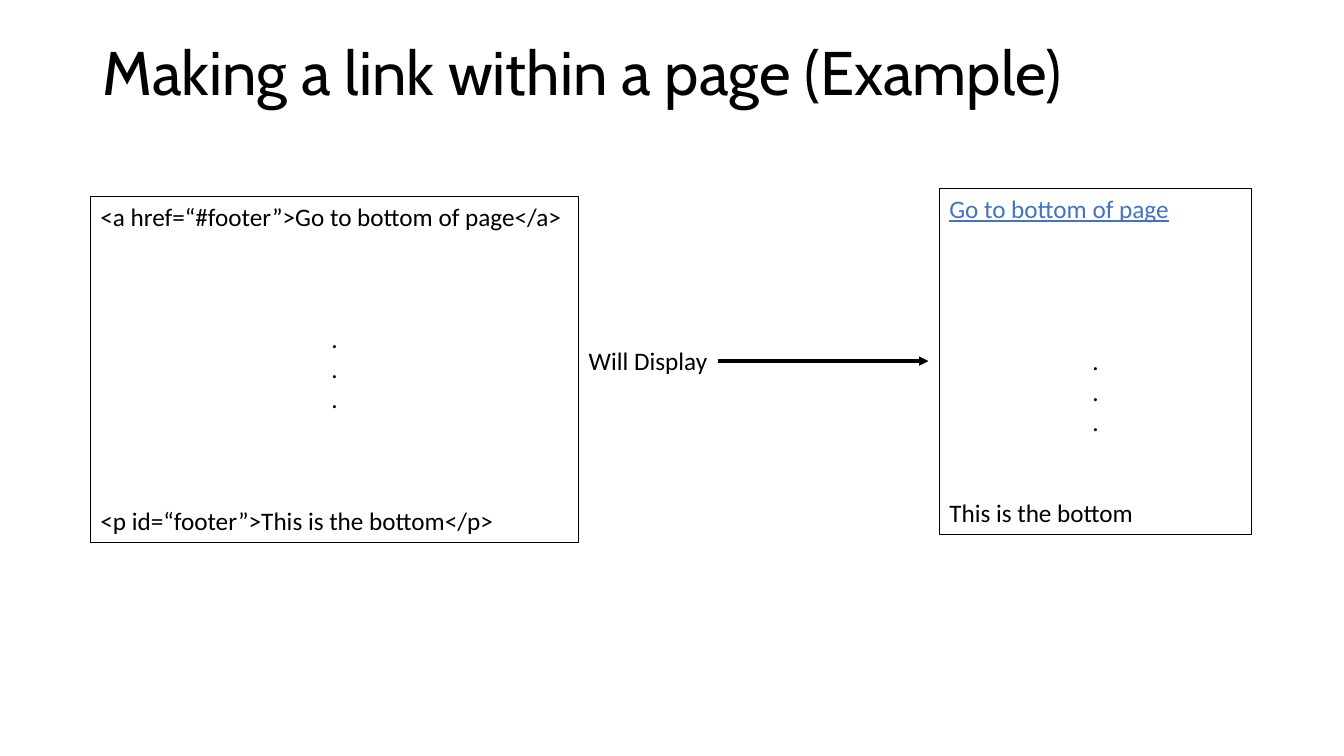
from dataclasses import dataclass

from lxml.etree import SubElement
from pptx import Presentation
from pptx.dml.color import RGBColor
from pptx.enum.shapes import MSO_CONNECTOR, MSO_SHAPE
from pptx.enum.text import MSO_ANCHOR, MSO_AUTO_SIZE, PP_ALIGN
from pptx.oxml.ns import qn
from pptx.util import Pt


@dataclass(frozen=True)
class Theme:
    ink: RGBColor = RGBColor(0, 0, 0)
    link: RGBColor = RGBColor(0x44, 0x72, 0xC4)
    head: str = "Cabin"
    body: str = "Calibri"
    big: int = 44
    text: int = 18
    row: float = 21.8
    edge: float = 0.75
    arrow: float = 2.25


THEME = Theme()


def put_run(para, text, size=THEME.text, face=THEME.body, color=THEME.ink):
    run = para.add_run()
    run.text = text
    font = run.font
    font.size, font.name, font.color.rgb = Pt(size), face, color
    return run


def set_frame(frame, anchor):
    frame.word_wrap = True
    frame.auto_size = MSO_AUTO_SIZE.NONE
    frame.vertical_anchor = anchor


def add_title(slide, box, text):
    title = slide.shapes.title
    title.left, title.top, title.width, title.height = map(Pt, box)
    set_frame(title.text_frame, MSO_ANCHOR.MIDDLE)
    para = title.text_frame.paragraphs[0]
    para.alignment = PP_ALIGN.LEFT
    para.line_spacing = 0.9
    put_run(para, text, THEME.big, THEME.head)


def add_page(slide, box, first, last, above, below, link=False):
    """Draw a framed page; above and below count the rows left free around the dots."""
    page = slide.shapes.add_shape(MSO_SHAPE.RECTANGLE, *map(Pt, box))
    page.shadow.inherit = False
    page.fill.background()
    page.line.color.rgb = THEME.ink
    page.line.width = Pt(THEME.edge)
    frame = page.text_frame
    set_frame(frame, MSO_ANCHOR.TOP)
    rows = [(first, 0), (".", above), (".", 0), (".", 0), (last, below)]
    for i, (text, gap) in enumerate(rows):
        para = frame.add_paragraph() if i else frame.paragraphs[0]
        para.alignment = PP_ALIGN.CENTER if text == "." else PP_ALIGN.LEFT
        if gap:
            para.space_before = Pt(gap * THEME.row)
        is_link = link and i == 0
        run = put_run(para, text, color=THEME.link if is_link else THEME.ink)
        run.font.underline = is_link


def add_step(slide, box, text, start, end):
    """Place a label in the box and an arrow at its middle from start to end."""
    left, top, width, height = box
    label = slide.shapes.add_textbox(*map(Pt, box))
    set_frame(label.text_frame, MSO_ANCHOR.TOP)
    put_run(label.text_frame.paragraphs[0], text)

    mid = top + height / 2
    arrow = slide.shapes.add_connector(
        MSO_CONNECTOR.STRAIGHT, Pt(left + start), Pt(mid), Pt(left + end), Pt(mid))
    arrow.line.color.rgb = THEME.ink
    arrow.line.width = Pt(THEME.arrow)
    SubElement(arrow.line._get_or_add_ln(), qn("a:tailEnd"), type="triangle")
    SubElement(arrow._element.spPr, qn("a:effectLst"))


def main():
    deck = Presentation()
    deck.slide_width, deck.slide_height = Pt(960), Pt(540)
    slide = deck.slides.add_slide(deck.slide_layouts[5])
    add_title(slide, (66, 1.5, 828, 104.4), "Making a link within a page (Example)")
    add_page(slide, (671, 134.6, 223.2, 247), "Go to bottom of page",
             "This is the bottom", 4, 2, link=True)
    add_page(slide, (64.6, 140.4, 348.8, 247),
             "<a href=“#footer”>Go to bottom of page</a>",
             "<p id=“footer”>This is the bottom</p>", 3, 3)
    add_step(slide, (413.4, 243.4, 111.6, 29), "Will Display", 99.2, 249.8)
    deck.save("out.pptx")


if __name__ == "__main__":
    main()
